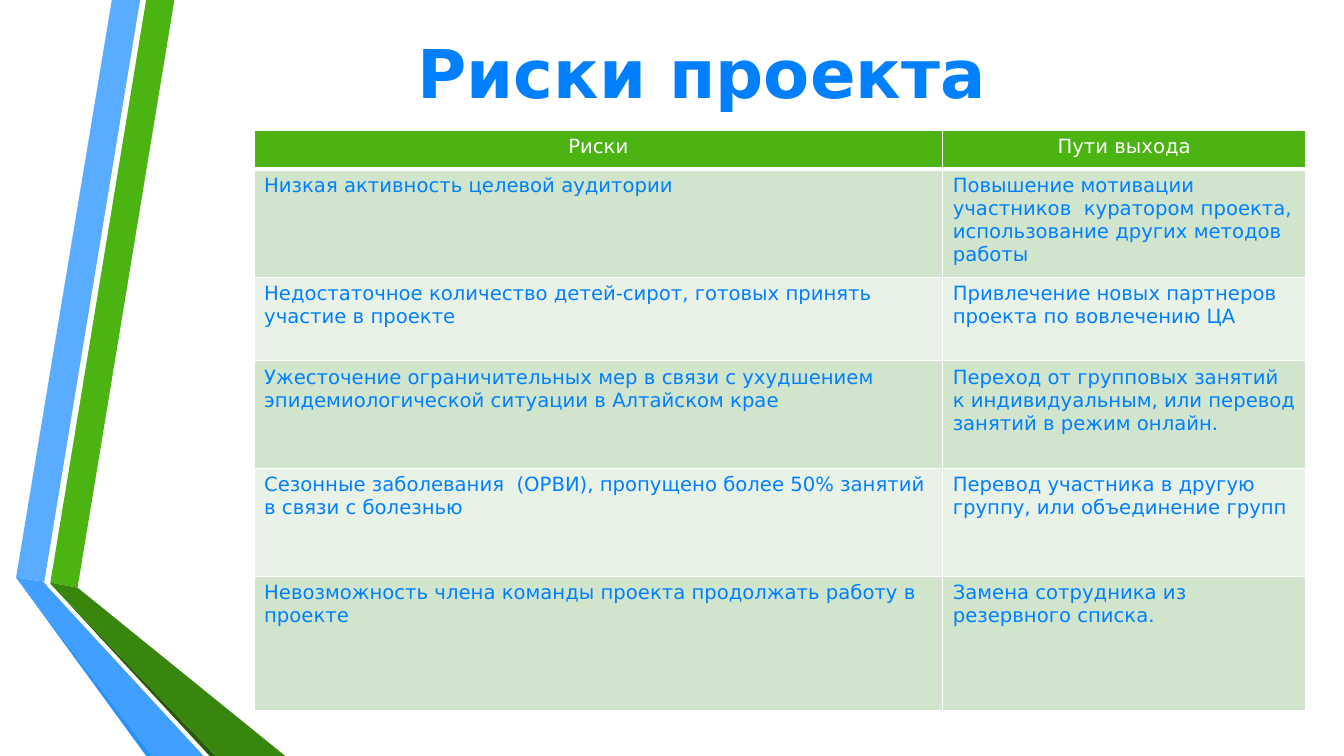
from dataclasses import dataclass

from lxml import etree
from pptx import Presentation
from pptx.dml.color import RGBColor
from pptx.enum.text import MSO_ANCHOR, MSO_AUTO_SIZE, PP_ALIGN
from pptx.oxml.ns import qn
from pptx.shapes.shapetree import SlideShapes
from pptx.slide import Slide
from pptx.table import _Cell
from pptx.util import Inches, Pt

CENTER, LEFT = PP_ALIGN.CENTER, PP_ALIGN.LEFT
MIDDLE = MSO_ANCHOR.MIDDLE
NO_AUTOFIT = MSO_AUTO_SIZE.NONE
TITLE_ONLY_LAYOUT = 5


@dataclass(frozen=True)
class Theme:
    font: str = "DejaVu Sans"
    title_size: int = 48
    table_size: int = 14
    text: str = "007FFF"
    header_text: str = "FFFFFF"
    header_fill: str = "4BB312"
    bands: tuple[str, str] = ("D0E5CC", "E9F2E7")
    border: str = "FFFFFF"
    thin_border: float = 1
    header_border: float = 3


@dataclass(frozen=True)
class Ribbon:
    color: str
    points: tuple[tuple[float, float], ...]


@dataclass(frozen=True)
class Risk:
    threat: str
    solution: str
    height: float


THEME = Theme()

RIBBONS = (
    Ribbon("4BB312", ((0.5, 5.78), (0.77, 5.83), (1.73, 0), (1.45, 0))),
    Ribbon("59ACFF", ((1.39, 0), (1.11, 0), (0.16, 5.73), (0.44, 5.77))),
    Ribbon("2692FF", ((0.16, 5.73), (1.45, 7.5), (1.51, 7.5))),
    Ribbon("265909", ((0.5, 5.79), (2.08, 7.5), (2.14, 7.5))),
    Ribbon("38860E", ((0.5, 5.79), (2.14, 7.5), (2.83, 7.5), (0.77, 5.83), (0.5, 5.78))),
    Ribbon("409FFF", ((2.02, 7.5), (0.48, 5.83), (0.43, 5.77), (0.16, 5.73), (1.51, 7.5))),
)

HEADER = Risk("Риски", "Пути выхода", 0.39)
RISKS = (
    Risk("Низкая активность целевой аудитории",
         "Повышение мотивации  участников  куратором проекта, "
         "использование других методов работы", 1.07),
    Risk("Недостаточное количество детей-сирот, готовых принять участие в проекте",
         "Привлечение новых партнеров проекта по вовлечению ЦА", 0.83),
    Risk("Ужесточение ограничительных мер в связи с ухудшением "
         "эпидемиологической ситуации в Алтайском крае",
         "Переход от групповых занятий к индивидуальным, "
         "или перевод занятий в режим онлайн.", 1.07),
    Risk("Сезонные заболевания  (ОРВИ), пропущено более 50% занятий в связи с болезнью",
         "Перевод участника в другую группу, или объединение групп", 1.07),
    Risk("Невозможность члена команды проекта продолжать работу в проекте",
         "Замена сотрудника из резервного списка.", 1.33),
)
COLUMN_WIDTHS = (6.83, 3.6)


def rgb(color: str) -> RGBColor:
    return RGBColor.from_string(color)


def draw_ribbon(shapes: SlideShapes, ribbon: Ribbon) -> None:
    start, *others = [(Inches(x), Inches(y)) for x, y in ribbon.points]
    outline = shapes.build_freeform(*start)
    outline.add_line_segments(others, close=True)
    band = outline.convert_to_shape()
    band.fill.solid()
    band.fill.fore_color.rgb = rgb(ribbon.color)
    band.line.fill.background()
    band.shadow.inherit = False


def write_title(slide: Slide, wording: str) -> None:
    title = slide.shapes.title
    title.left, title.top = Inches(1.61), Inches(0.02)
    title.width, title.height = Inches(10.7), Inches(1.39)
    frame = title.text_frame
    frame.text = wording
    frame.word_wrap = True
    frame.auto_size = NO_AUTOFIT
    frame.vertical_anchor = MIDDLE
    heading = frame.paragraphs[0]
    heading.alignment = CENTER
    heading.space_after = Pt(6)
    heading.font.name = THEME.font
    heading.font.size = Pt(THEME.title_size)
    heading.font.bold = True
    heading.font.color.rgb = rgb(THEME.text)


def set_borders(cell: _Cell, top: float, bottom: float) -> None:
    """Put the border lines ahead of the cell's fill, as the schema requires."""
    properties = cell._tc.get_or_add_tcPr()
    sides = {"lnL": THEME.thin_border, "lnR": THEME.thin_border,
             "lnT": top, "lnB": bottom}
    for position, (side, width) in enumerate(sides.items()):
        line = etree.Element(qn(f"a:{side}"), w=str(Pt(width)))
        fill = etree.SubElement(line, qn("a:solidFill"))
        etree.SubElement(fill, qn("a:srgbClr"), val=THEME.border)
        properties.insert(position, line)


def write_cell(cell: _Cell, wording: str, row: int) -> None:
    is_header = row == 0
    cell.text = wording
    cell.fill.solid()
    cell.fill.fore_color.rgb = rgb(
        THEME.header_fill if is_header else THEME.bands[(row - 1) % 2])
    entry = cell.text_frame.paragraphs[0]
    entry.alignment = CENTER if is_header else LEFT
    entry.font.name = THEME.font
    entry.font.size = Pt(THEME.table_size)
    entry.font.bold = False
    entry.font.color.rgb = rgb(THEME.header_text if is_header else THEME.text)
    set_borders(cell,
                top=THEME.header_border if row == 1 else THEME.thin_border,
                bottom=THEME.header_border if is_header else THEME.thin_border)


def draw_risk_table(shapes: SlideShapes) -> None:
    rows = (HEADER, *RISKS)
    risk_table = shapes.add_table(
        len(rows), len(COLUMN_WIDTHS), Inches(2.52), Inches(1.29),
        Inches(sum(COLUMN_WIDTHS)), Inches(sum(risk.height for risk in rows))).table
    for column, width in zip(risk_table.columns, COLUMN_WIDTHS):
        column.width = Inches(width)
    for row, risk in enumerate(rows):
        risk_table.rows[row].height = Inches(risk.height)
        for column, wording in enumerate((risk.threat, risk.solution)):
            write_cell(risk_table.cell(row, column), wording, row)


def main() -> None:
    deck = Presentation()
    deck.slide_width, deck.slide_height = Inches(13.33), Inches(7.5)
    slide = deck.slides.add_slide(deck.slide_layouts[TITLE_ONLY_LAYOUT])
    for ribbon in RIBBONS:
        draw_ribbon(slide.shapes, ribbon)
    write_title(slide, "Риски проекта")
    draw_risk_table(slide.shapes)
    deck.save("out.pptx")


if __name__ == "__main__":
    main()
